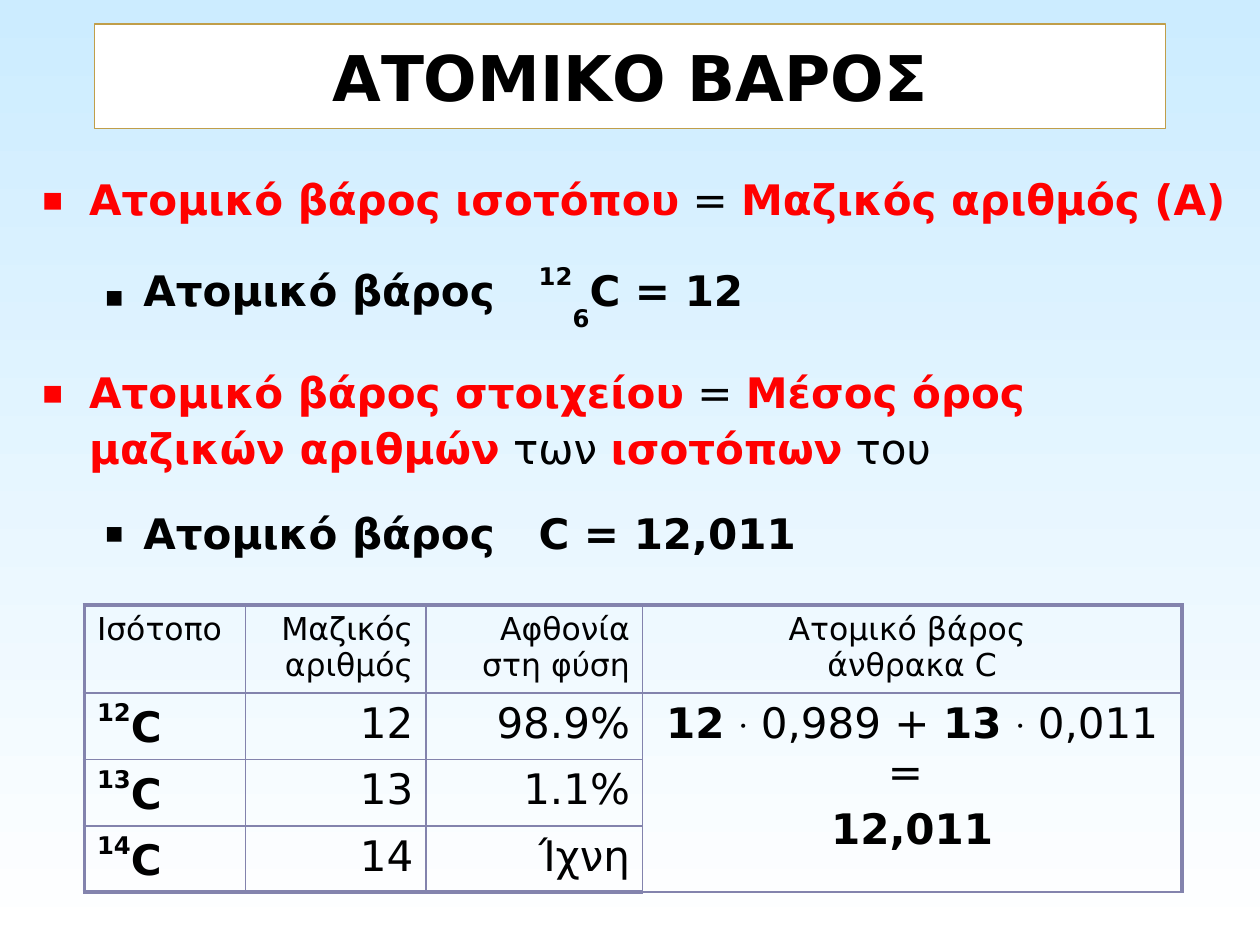
"""Builds the slide on the atomic weight of isotopes and elements."""
from lxml.etree import SubElement
from pptx import Presentation
from pptx.dml.color import RGBColor as Rgb
from pptx.enum.shapes import MSO_SHAPE as Shape
from pptx.enum.text import MSO_ANCHOR as Anchor, PP_ALIGN as Align
from pptx.oxml.ns import qn
from pptx.util import Inches, Pt

COLORS = {"sky": "CCECFF", "white": "FFFFFF", "gold": "C09E4A",
          "black": "000000", "red": "FF0000", "rule": "8383AD"}
FONT = "DejaVu Sans"
KEY = {"bold": True, "color": "red"}
BOLD = {"bold": True}
DOT = ("•", {"size": 14, "base": 30})


def rgb(name):
    return Rgb.from_string(COLORS[name])


def write(paragraph, text, size=24, bold=False, color="black", base=0):
    for index, line in enumerate(text.split("\n")):
        if index:
            paragraph.add_line_break()
        run = paragraph.add_run()
        run.text = line
        font = run.font
        font.name, font.size, font.bold = FONT, Pt(size), bold
        font.color.rgb = rgb(color)
        if base:
            run._r.get_or_add_rPr().set("baseline", str(base * 1000))


class SlideBuilder:
    def __init__(self, slide):
        self.slide = slide

    def background(self, top, bottom):
        fill = self.slide.background.fill
        fill.gradient()
        fill.gradient_angle = 270
        for stop, color, position in zip(fill.gradient_stops, (top, bottom), (0, 1)):
            stop.color.rgb = rgb(color)
            stop.position = position

    def title(self, text, left, top, width, height):
        box = self.slide.shapes.add_shape(
            Shape.RECTANGLE, Inches(left), Inches(top), Inches(width), Inches(height))
        box.shadow.inherit = False
        box.fill.solid()
        box.fill.fore_color.rgb = rgb("white")
        box.line.color.rgb = rgb("gold")
        box.line.width = Pt(0.75)
        box.text_frame.vertical_anchor = Anchor.MIDDLE
        paragraph = box.text_frame.paragraphs[0]
        paragraph.alignment = Align.CENTER
        write(paragraph, text, size=36, bold=True)

    def fill_frame(self, frame, paragraphs, gap, align=Align.LEFT):
        for index, parts in enumerate(paragraphs):
            paragraph = frame.add_paragraph() if index else frame.paragraphs[0]
            paragraph.alignment = align
            paragraph.space_before = Pt(gap if index else 0)
            for text, style in parts:
                write(paragraph, text, **style)

    def bullet(self, paragraph, level):
        margin, hanging, percent, color = [(0.38, 0.38, 80, "red"),
                                           (0.81, 0.31, 70, "black")][level]
        paragraph.level = level
        paragraph.line_spacing = 1.1
        props = paragraph._p.get_or_add_pPr()
        props.set("marL", str(Inches(margin)))
        props.set("indent", str(-Inches(hanging)))
        tint = SubElement(props, qn("a:buClr"))
        SubElement(tint, qn("a:srgbClr"), val=COLORS[color])
        SubElement(props, qn("a:buSzPct"), val=str(percent * 1000))
        SubElement(props, qn("a:buFont"), typeface=FONT)
        SubElement(props, qn("a:buChar"), char="▪")

    def bullets(self, items, left, top, width, height):
        box = self.slide.shapes.add_textbox(
            Inches(left), Inches(top), Inches(width), Inches(height))
        frame = box.text_frame
        frame.word_wrap = True
        self.fill_frame(frame, [parts for _, parts in items], gap=17)
        for paragraph, (level, _) in zip(frame.paragraphs, items):
            self.bullet(paragraph, level)

    def borders(self, cell, outer_sides):
        props = cell._tc.get_or_add_tcPr()
        for side, outer in zip("LRTB", outer_sides):
            line = SubElement(props, qn(f"a:ln{side}"), w=str(Pt(2.25 if outer else 1)))
            paint = SubElement(line, qn("a:solidFill"))
            SubElement(paint, qn("a:srgbClr"), val=COLORS["rule"])

    def table(self, rows, widths, heights, aligns, left, top):
        table = self.slide.shapes.add_table(
            len(heights), len(widths), Inches(left), Inches(top),
            Inches(sum(widths)), Inches(sum(heights))).table
        table.first_row = table.horz_banding = False
        for column, width in zip(table.columns, widths):
            column.width = Inches(width)
        for row, height in zip(table.rows, heights):
            row.height = Inches(height)
        last_row, last_col = len(heights) - 1, len(widths) - 1
        table.cell(1, last_col).merge(table.cell(last_row, last_col))
        for r in range(last_row + 1):
            for c in range(last_col + 1):
                cell = table.cell(r, c)
                self.borders(cell, (c == 0, c == last_col, r == 0, r == last_row))
                cell.fill.background()
                if c < len(rows[r]):
                    self.fill_frame(cell.text_frame, rows[r][c], 5, aligns[c])


def isotope_row(mass, abundance):
    return [[[(mass, {"bold": True, "base": 50}), ("C", BOLD)]],
            [[(mass, {})]], [[(abundance, {})]]]


def main():
    deck = Presentation()
    deck.slide_width, deck.slide_height = Inches(10), Inches(7.5)
    builder = SlideBuilder(deck.slides.add_slide(deck.slide_layouts[6]))
    builder.background("sky", "white")
    builder.title("ΑΤΟΜΙΚΟ ΒΑΡΟΣ", 0.75, 0.19, 8.5, 0.83)

    definitions = [
        (0, [("Ατομικό βάρος ισοτόπου", KEY), (" = ", {}),
             ("Μαζικός αριθμός (Α)", KEY)]),
        (1, [("Ατομικό βάρος   ", BOLD), ("12", {"bold": True, "base": 50}),
             ("6", {"bold": True, "base": -50}), ("C = 12", BOLD)]),
        (0, [("Ατομικό βάρος στοιχείου", KEY), (" = ", {}),
             ("Μέσος όρος\nμαζικών αριθμών", KEY), (" των ", {}),
             ("ισοτόπων", KEY), (" του", {})]),
        (1, [("Ατομικό βάρος   C = 12,011", BOLD)]),
    ]
    builder.bullets(definitions, 0.23, 1.29, 9.6, 3.14)

    headings = ("Ισότοπο", "Μαζικός\nαριθμός", "Αφθονία\nστη φύση",
                "Ατομικό βάρος \nάνθρακα C")
    average = [[("12 ", BOLD), DOT, (" 0,989 + ", {}),
                ("13 ", BOLD), DOT, (" 0,011 = ", {})],
               [("12,011", BOLD)]]
    rows = [[[[(heading, {"size": 18})]] for heading in headings],
            isotope_row("12", "98.9%") + [average],
            isotope_row("13", "1.1%"),
            isotope_row("14", "Ίχνη")]
    builder.table(rows, (1.28, 1.43, 1.72, 4.28), (0.7, 0.5, 0.5, 0.5),
                  (Align.LEFT, Align.RIGHT, Align.RIGHT, Align.CENTER), 0.67, 4.8)
    deck.save("out.pptx")


if __name__ == "__main__":
    main()
